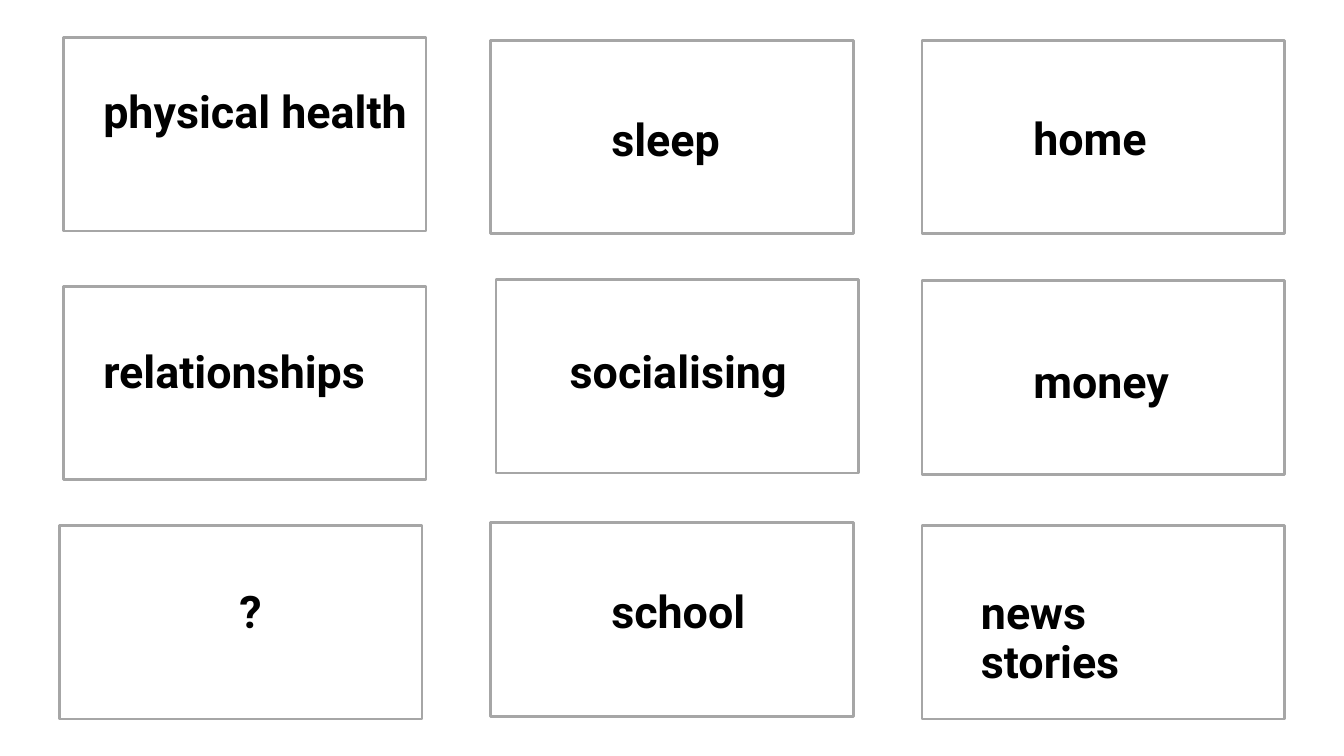
from pptx import Presentation
from pptx.dml.color import RGBColor
from pptx.enum.shapes import MSO_SHAPE
from pptx.enum.text import MSO_ANCHOR, PP_ALIGN
from pptx.util import Inches, Pt

RECTANGLE = MSO_SHAPE.RECTANGLE
TOP = MSO_ANCHOR.TOP
LEFT, CENTER = PP_ALIGN.LEFT, PP_ALIGN.CENTER

# Content: word, card corner, label corner, label width, alignment
CARDS = [
    ("physical health", (0.47, 0.28), (0.67, 0.62), 2.51, LEFT),
    ("sleep", (3.65, 0.30), (4.45, 0.83), 1.43, LEFT),
    ("home", (6.86, 0.30), (7.59, 0.82), 1.43, LEFT),
    ("relationships", (0.47, 2.13), (0.67, 2.55), 2.29, LEFT),
    ("socialising", (3.69, 2.08), (4.14, 2.55), 1.92, LEFT),
    ("money", (6.86, 2.09), (7.59, 2.63), 1.43, LEFT),
    ("?", (0.44, 3.91), (1.15, 4.34), 1.43, CENTER),
    ("school", (3.65, 3.89), (4.45, 4.34), 2.74, LEFT),
    ("news stories", (6.86, 3.91), (7.20, 4.35), 2.05, LEFT),
]
PAGE_WIDTH = 10
PAGE_HEIGHT = PAGE_WIDTH * 9 / 16
CARD_SIZE = (2.7, 1.44)
LABEL_HEIGHT = 0.59
FONT = "Roboto"
BORDER, INK = "A6A6A6", "000000"


def set_color(target, value):
    target.rgb = RGBColor.from_string(value)


def inches(*values):
    return [Inches(value) for value in values]


def add_card(page, corner):
    card = page.shapes.add_shape(RECTANGLE, *inches(*corner, *CARD_SIZE))
    card.shadow.inherit = False
    card.fill.background()
    set_color(card.line.color, BORDER)
    card.line.width = Pt(1.5)


def add_label(page, word, corner, width, alignment):
    box = page.shapes.add_textbox(*inches(*corner, width, LABEL_HEIGHT))
    frame = box.text_frame
    frame.word_wrap = True
    frame.vertical_anchor = TOP
    frame.text = word
    para = frame.paragraphs[0]
    para.alignment = alignment
    para.line_spacing = 0.9
    para.space_after = Pt(6)
    font = para.runs[0].font
    font.name = FONT
    font.size = Pt(24)
    font.bold = True
    set_color(font.color, INK)


def main():
    deck = Presentation()
    deck.slide_width, deck.slide_height = inches(PAGE_WIDTH, PAGE_HEIGHT)
    page = deck.slides.add_slide(deck.slide_layouts[6])

    # Card outlines first, then the words above them
    for _, card_corner, _, _, _ in CARDS:
        add_card(page, card_corner)
    for word, _, label_corner, width, alignment in CARDS:
        add_label(page, word, label_corner, width, alignment)

    deck.save("out.pptx")


if __name__ == "__main__":
    main()
